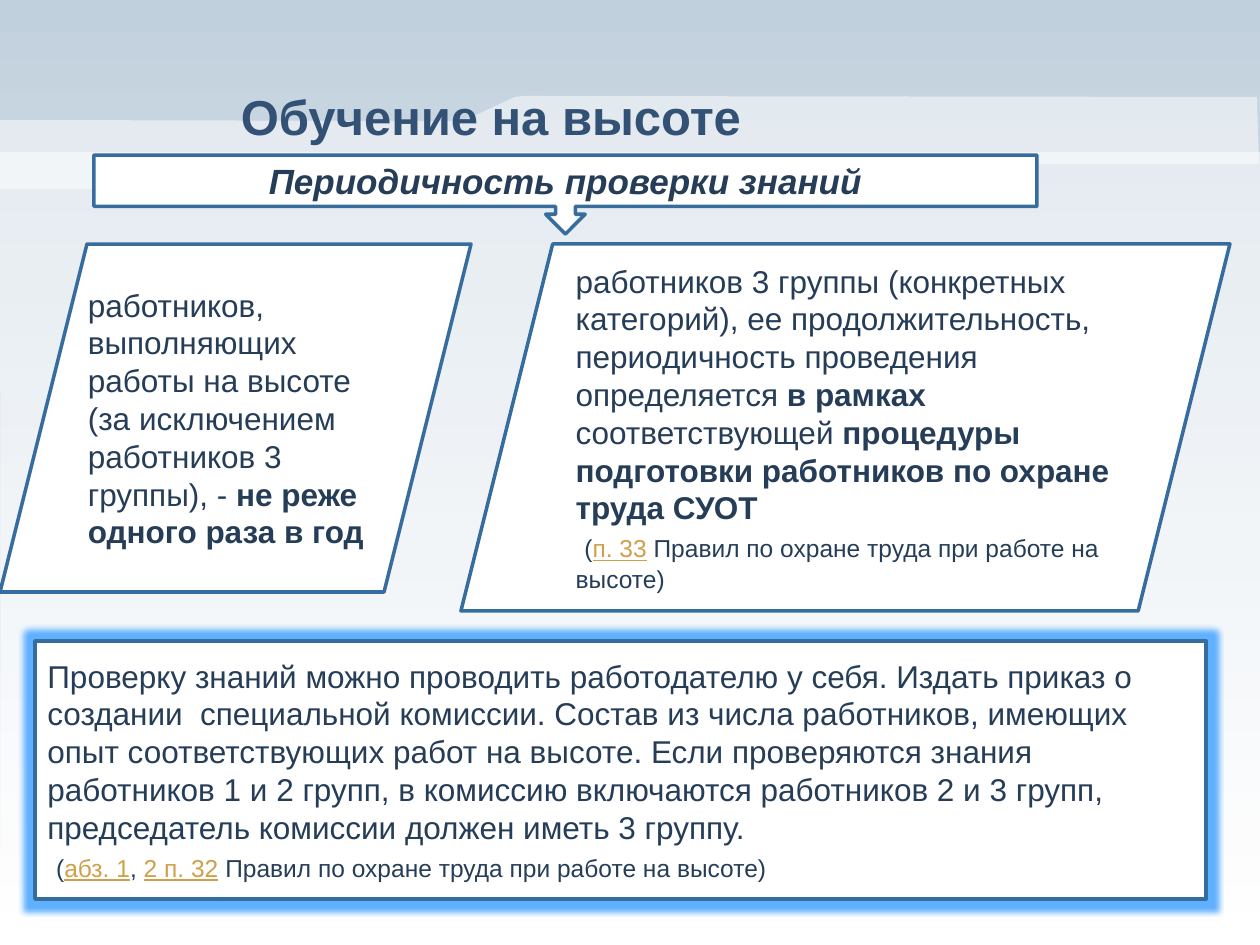
import pptx
import pptx.dml.color
import pptx.enum.shapes
import pptx.enum.text
import pptx.oxml
import pptx.oxml.ns
import pptx.util
from lxml import etree

PX = 914400 / 126
FONT = "Arial"
COLORS = {
    "sky": "C1D0DD", "white": "FFFFFF", "title": "335175", "text": "263D58",
    "line": "376D9E", "link": "CF9F49", "glow": "5FB0FF",
}
SHAPES = pptx.enum.shapes.MSO_SHAPE
ALIGN = pptx.enum.text.PP_ALIGN
PLAIN, BOLD = {}, {"bold": True}
SMALL = {"size": 14}
LINK = {"size": 14, "color": "link", "underline": True}

PANE = (0, 152, 1260, 793)
PANE_POINTS = [(1, 792), (1260, 793), (1260, 0), (0, 0)]
RIBBON = (0, 96, 1260, 93)
RIBBON_POINTS = [
    (1257, 1), (537, 0), (522, 0), (515, 1), (476, 19), (466, 23), (449, 25),
    (0, 24), (0, 93), (789, 93), (804, 89), (849, 69), (872, 68), (1259, 68),
]
RULES = " Правил по охране труда при работе на высоте)"


def px(n):
    return pptx.util.Emu(round(n * PX))


def rgb(name):
    return pptx.dml.color.RGBColor.from_string(COLORS[name])


def add_effect(parent, tag, **attrs):
    return etree.SubElement(parent, pptx.oxml.ns.qn(tag), attrs)


def add_run(p, text, size=18, color="text", bold=False, italic=False, underline=False):
    r = p.add_run()
    r.text = text
    font = r.font
    font.name, font.size = FONT, pptx.util.Pt(size)
    font.bold, font.italic, font.underline = bold, italic, underline
    font.color.rgb = rgb(color)


def write(tf, paragraphs, align=ALIGN.LEFT):
    """Each paragraph is a list of (text, run options)."""
    tf.word_wrap = True
    tf.vertical_anchor = pptx.enum.text.MSO_ANCHOR.MIDDLE
    for i, runs in enumerate(paragraphs):
        p = tf.add_paragraph() if i else tf.paragraphs[0]
        p.alignment = align
        for text, options in runs:
            add_run(p, text, **options)


def add_translucent_outline(s, box, points):
    left, top = box[:2]
    placed = [(left + x, top + y) for x, y in points]
    builder = s.shapes.build_freeform(*placed[0], scale=PX)
    builder.add_line_segments(placed[1:], close=True)
    sp = builder.convert_to_shape()
    sp.shadow.inherit = False
    sp.line.fill.background()
    sp.fill.solid()
    sp.fill.fore_color.rgb = rgb("white")
    color = sp._element.spPr.find(".//" + pptx.oxml.ns.qn("a:srgbClr"))
    add_effect(color, "a:alpha", val="50000")


def draw_background(s):
    fill = s.background.fill
    fill.gradient()
    fill.gradient_angle = 270
    for stop, name, position in zip(fill.gradient_stops, ("sky", "white"), (0, 1)):
        stop.color.rgb = rgb(name)
        stop.position = position
    add_translucent_outline(s, PANE, PANE_POINTS)
    add_translucent_outline(s, RIBBON, RIBBON_POINTS)


def draw_title(s, box, text):
    """Fill the title and bring it in front of the background outlines."""
    sp = s.shapes.title
    sp._element.getparent().append(sp._element)
    sp.left, sp.top, sp.width, sp.height = map(px, box)
    write(sp.text_frame, [[(text, {"size": 28, "color": "title", "bold": True})]], ALIGN.CENTER)


def draw_panel(s, kind, box, paragraphs, align=ALIGN.LEFT):
    sp = s.shapes.add_shape(kind, *map(px, box))
    sp.shadow.inherit = False
    sp.fill.solid()
    sp.fill.fore_color.rgb = rgb("white")
    sp.line.color.rgb = rgb("line")
    sp.line.width = pptx.util.Pt(2)
    write(sp.text_frame, paragraphs, align)
    return sp


def add_glow(sp, radius):
    effects = sp._element.spPr.find(pptx.oxml.ns.qn("a:effectLst"))
    glow = add_effect(effects, "a:glow", rad=str(px(radius)))
    add_effect(glow, "a:srgbClr", val=COLORS["glow"])


def main():
    prs = pptx.Presentation()
    prs.slide_width, prs.slide_height = px(1260), px(945)
    s = prs.slides.add_slide(prs.slide_layouts[5])
    draw_background(s)
    draw_title(s, (25, 76, 932, 79), "Обучение на высоте")
    draw_panel(s, SHAPES.DOWN_ARROW_CALLOUT, (94, 155, 943, 79), [
        [("Периодичность проверки знаний", {"size": 20, "bold": True, "italic": True})],
    ], ALIGN.CENTER)
    draw_panel(s, SHAPES.PARALLELOGRAM, (0, 244, 471, 348), [
        [("работников, выполняющих работы на высоте (за исключением "
          "работников 3 группы), - ", PLAIN),
         ("не реже одного раза в год", BOLD)],
    ])
    draw_panel(s, SHAPES.PARALLELOGRAM, (461, 244, 769, 367), [
        [("работников 3 группы (конкретных категорий), ее продолжительность, "
          "периодичность проведения определяется ", PLAIN),
         ("в рамках ", BOLD), ("соответствующей ", PLAIN),
         ("процедуры подготовки работников по охране труда СУОТ", BOLD)],
        [(" ", PLAIN), ("(", SMALL), ("п. 33", LINK), (RULES, SMALL)],
    ])
    note = draw_panel(s, SHAPES.RECTANGLE, (35, 641, 1171, 258), [
        [("Проверку знаний можно проводить работодателю у себя. Издать приказ о "
          "создании  специальной комиссии. Состав из числа работников, имеющих опыт "
          "соответствующих работ на высоте. Если проверяются знания работников 1 и 2 "
          "групп, в комиссию включаются работников 2 и 3 групп, председатель комиссии "
          "должен иметь 3 группу.", PLAIN)],
        [(" ", PLAIN), ("(", SMALL), ("абз. 1", LINK), (", ", SMALL),
         ("2 п. 32", LINK), (RULES, SMALL)],
    ])
    add_glow(note, 8)
    prs.save("out.pptx")


if __name__ == "__main__":
    main()
